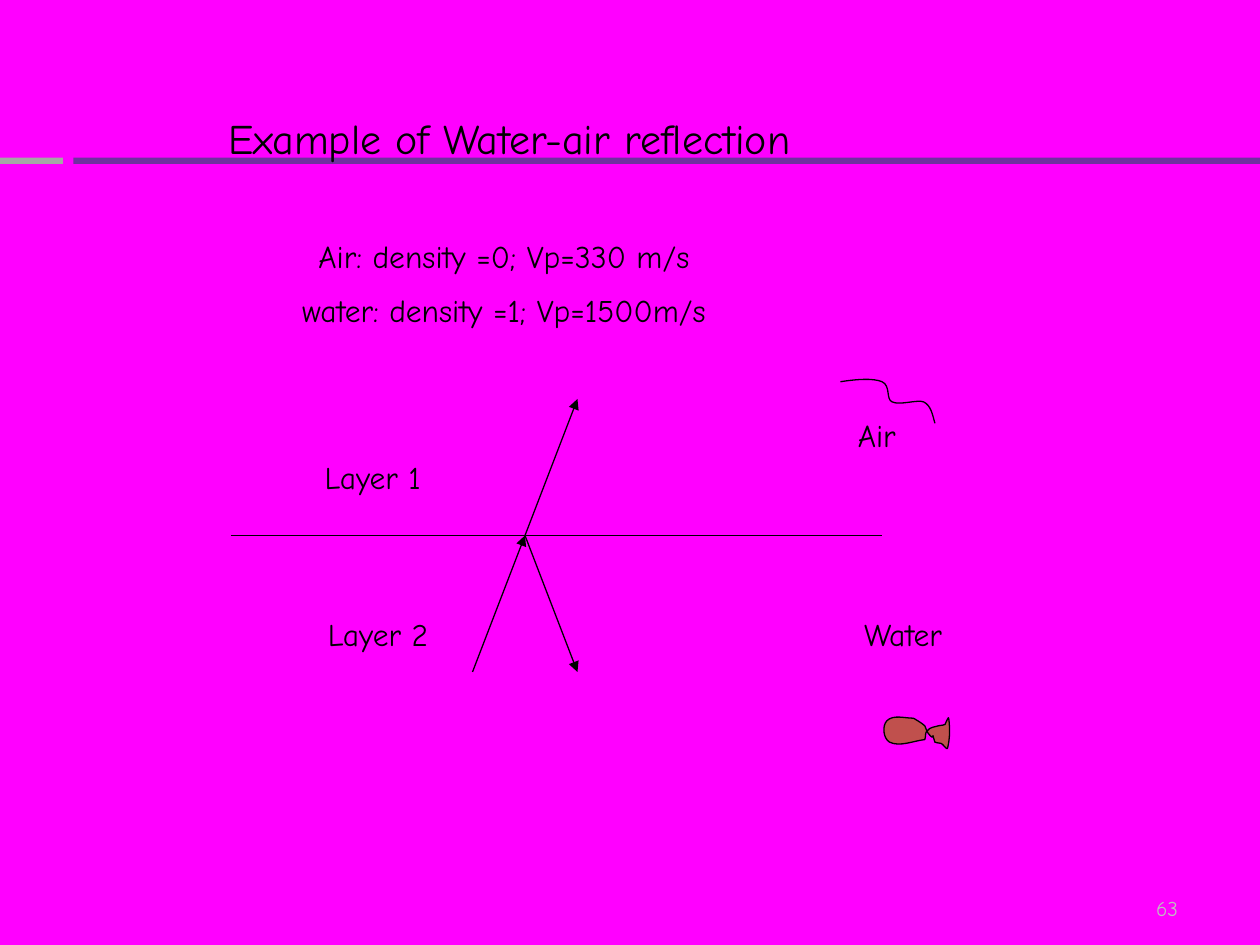
"""Build a slide on the reflection of a wave where water meets air."""
from dataclasses import dataclass

from pptx import Presentation
from pptx.dml.color import RGBColor
from pptx.enum.shapes import MSO_CONNECTOR, MSO_SHAPE
from pptx.enum.text import MSO_ANCHOR, MSO_AUTO_SIZE, PP_ALIGN
from pptx.oxml.ns import qn
from pptx.util import Inches, Pt

HUES = {"back": "FF00FF", "ink": "000000", "bar": "7030A0", "stub": "A6A6A6",
        "page": "BFBFBF", "fish": "C0504D"}
FONT = "Comic Neue"
WIDE, HIGH = Inches(10), Inches(7.5)
CELL = WIDE // 120
FINE = WIDE // 1000


@dataclass
class Label:
    """Centred text in a box of grid cells."""
    text: str
    left: float
    top: float
    width: float
    height: float = 4.8


@dataclass
class Ray:
    """Line between two grid points."""
    start: tuple[int, int]
    end: tuple[int, int]
    arrow: bool = True


LABELS = [Label("Air", 73, 39, 21), Label("Water", 68, 58, 36),
          Label("Layer 1", 28, 43, 15), Label("Layer 2", 27, 58, 18)]
HIT = (50, 51)
RAYS = [Ray((22, 51), (84, 51), False), Ray(HIT, (55, 64)),
        Ray(HIT, (55, 38)), Ray((45, 64), HIT)]
BARS = [("bar", 7, 113), ("stub", 0, 6)]
BREEZE = [(667, 303), (680, 301), (693, 300), (700, 303), (707, 306), (703, 317),
          (708, 319), (714, 322), (728, 317), (733, 319), (739, 322), (740, 329),
          (742, 336)]
FISH = [(742, 589), (738, 576), (744, 592), (736, 581), (735, 580), (735, 577),
        (734, 576), (732, 574), (725, 570), (725, 570), (718, 570), (709, 567),
        (704, 572), (700, 576), (701, 586), (706, 589), (714, 593), (725, 588),
        (734, 587), (735, 585), (734, 581), (736, 580), (738, 577), (742, 577),
        (745, 576), (747, 576), (750, 575), (750, 575), (751, 573), (753, 568),
        (753, 570), (754, 578), (754, 586), (752, 594), (751, 595), (749, 591),
        (747, 590), (745, 590), (742, 589), (742, 589)]


def hue(name: str) -> RGBColor:
    return RGBColor.from_string(HUES[name])


def place(shape, left: float, top: float, width: float, height: float) -> None:
    shape.left, shape.top = round(left * CELL), round(top * CELL)
    shape.width, shape.height = round(width * CELL), round(height * CELL)


def write(shape, lines: list[str], size: float, tint: str = "ink",
          align=PP_ALIGN.CENTER) -> None:
    frame = shape.text_frame
    frame.text = "\n".join(lines)
    frame.word_wrap = True
    frame.auto_size = MSO_AUTO_SIZE.NONE
    frame.vertical_anchor = MSO_ANCHOR.TOP
    for rank, para in enumerate(frame.paragraphs):
        props = para._p.get_or_add_pPr()
        props.set("marL", "0")
        props.set("indent", "0")
        props.append(props.makeelement(qn("a:buNone"), {}))
        para.alignment = align
        para.space_before = Pt(size / 2 if rank else 0)
        para.font.name, para.font.size = FONT, Pt(size)
        para.font.color.rgb = hue(tint)


def add_text(slide, label: Label, size: float = 18, tint: str = "ink",
             align=PP_ALIGN.CENTER):
    box = slide.shapes.add_textbox(0, 0, CELL, CELL)
    place(box, label.left, label.top, label.width, label.height)
    write(box, [label.text], size, tint, align)
    return box


def add_bar(slide, tint: str, left: float, width: float) -> None:
    bar = slide.shapes.add_shape(MSO_SHAPE.RECTANGLE, 0, 0, CELL, CELL)
    place(bar, left, 15, width, 0.6)
    bar.shadow.inherit = False
    bar.fill.solid()
    bar.fill.fore_color.rgb = hue(tint)
    bar.line.fill.background()


def add_ray(slide, ray: Ray) -> None:
    ends = [n * CELL for n in ray.start + ray.end]
    line = slide.shapes.add_connector(MSO_CONNECTOR.STRAIGHT, *ends)
    line.line.color.rgb = hue("ink")
    line.line.width = Pt(0.75)
    props = line._element.spPr
    props.append(props.makeelement(qn("a:effectLst"), {}))
    if ray.arrow:
        edge = props.find(qn("a:ln"))
        edge.append(edge.makeelement(qn("a:tailEnd"), {"type": "triangle"}))


def bend(shape) -> None:
    """Turn each three straight segments into one cubic curve."""
    legs = list(shape._element.iter(qn("a:lnTo")))
    for at in range(0, len(legs), 3):
        curve = legs[at].makeelement(qn("a:cubicBezTo"), {})
        legs[at].addprevious(curve)
        for leg in legs[at:at + 3]:
            curve.append(leg[0])
            leg.getparent().remove(leg)


def add_curve(slide, knots: list[tuple[int, int]], tint: str = "") -> None:
    spots = [(x * FINE, y * FINE) for x, y in knots]
    pen = slide.shapes.build_freeform(*spots[0])
    pen.add_line_segments(spots[1:], close=False)
    shape = pen.convert_to_shape()
    bend(shape)
    shape.shadow.inherit = False
    shape.line.color.rgb = hue("ink")
    shape.line.width = Pt(0.75)
    if tint:
        route = next(shape._element.iter(qn("a:path")))
        route.append(route.makeelement(qn("a:close"), {}))
        shape.fill.solid()
        shape.fill.fore_color.rgb = hue(tint)
    else:
        shape.fill.background()


def main() -> None:
    deck = Presentation()
    deck.slide_width, deck.slide_height = WIDE, HIGH
    slide = deck.slides.add_slide(deck.slide_layouts[1])
    slide.background.fill.solid()
    slide.background.fill.fore_color.rgb = hue("back")

    page = add_text(slide, Label("63", 86, 83.4, 28, 4.9), 12, "page", PP_ALIGN.RIGHT)
    page.text_frame.vertical_anchor = MSO_ANCHOR.BOTTOM
    page.text_frame.margin_right = Inches(0.15)
    for bar in BARS:
        add_bar(slide, *bar)

    title, body = slide.shapes.title, slide.placeholders[1]
    place(title, 13, 10.1, 71, 6)
    write(title, ["Example of Water-air reflection"], 24)
    place(body, 24, 22, 48, 10.2)
    write(body, ["Air: density =0; Vp=330 m/s", "water: density =1; Vp=1500m/s"], 18)
    for holder in (title, body):
        slide.shapes._spTree.append(holder._element)

    for label in LABELS:
        add_text(slide, label)
    for ray in RAYS:
        add_ray(slide, ray)
    add_curve(slide, BREEZE)
    add_curve(slide, FISH, "fish")
    deck.save("out.pptx")


if __name__ == "__main__":
    main()
